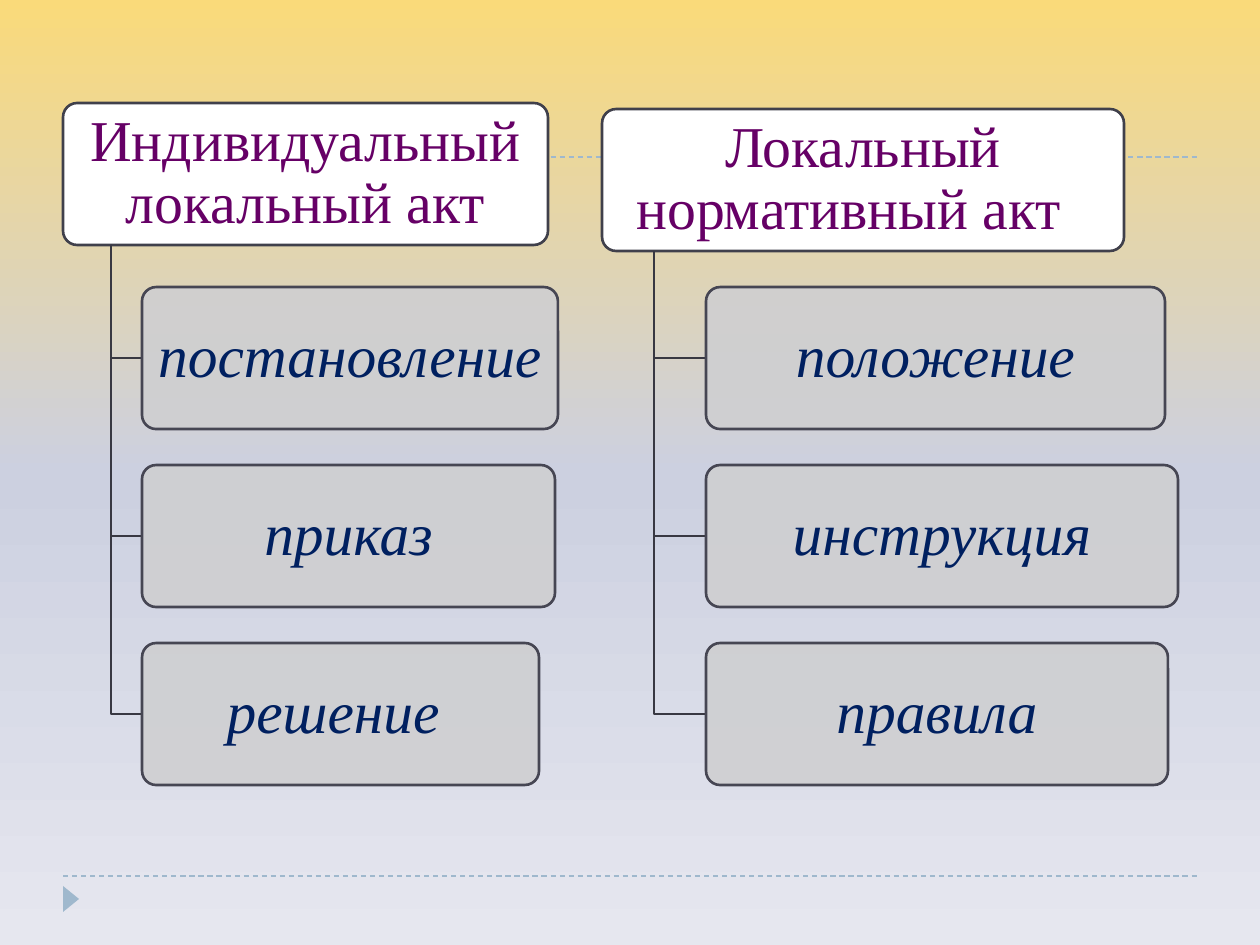
from copy import deepcopy
from dataclasses import dataclass
from pptx import Presentation
from pptx.dml.color import RGBColor as Rgb
from pptx.enum.dml import MSO_LINE as Dash
from pptx.enum.shapes import MSO_CONNECTOR as Conn, MSO_SHAPE as Kind
from pptx.enum.text import MSO_ANCHOR as Anchor, PP_ALIGN as Align
from pptx.oxml.ns import qn
from pptx.oxml.xmlchemy import OxmlElement as Tag
from pptx.util import Pt

PX = 914400 / 126  # EMU in one px


@dataclass(frozen=True)
class Theme:
    sky: tuple = ("FADA7A", "CCD0E0", "E6E7EF")
    rule: str = "9FB8CD"
    limb: str = "383842"
    font: str = "Times New Roman"
    # fill, opacity in %, line, text colour, text size, italic
    head: tuple = ("FFFFFF", 100, "40404B", "660066", 33, False)
    leaf: tuple = ("CFCFD1", 90, "464653", "002060", 34, True)


def emu(*vals):
    return [round(v * PX) for v in vals]


def add_box(text, spot, look):
    """Draw a rounded box at spot (left, top, width, height in px)."""
    fill, alpha, edge, ink, size, slant = look
    box = shapes.add_shape(Kind.ROUNDED_RECTANGLE, *emu(*spot))
    box.shadow.inherit = False
    box.adjustments[0] = 0.1
    box.fill.solid()
    box.fill.fore_color.rgb = Rgb.from_string(fill)
    if alpha < 100:
        tag = Tag("a:alpha")
        tag.set("val", str(alpha * 1000))
        box.fill._xPr.find(qn("a:solidFill"))[0].append(tag)
    box.line.color.rgb = Rgb.from_string(edge)
    box.line.width = Pt(1.5)
    frame = box.text_frame
    frame.word_wrap = True
    frame.vertical_anchor = Anchor.MIDDLE
    frame.margin_left, frame.margin_right = emu(9, 9)
    frame.margin_top, frame.margin_bottom = emu(6, 6)
    para = frame.paragraphs[0]
    para.alignment = Align.CENTER
    para.line_spacing = 0.9
    run = para.add_run()
    run.text = text
    run.font.name = theme.font
    run.font.size = Pt(size)
    run.font.italic = slant
    run.font.color.rgb = Rgb.from_string(ink)


theme = Theme()
deck = Presentation()
deck.slide_width, deck.slide_height = emu(1260, 945)
slide = deck.slides.add_slide(deck.slide_layouts[6])
shapes = slide.shapes

# Background: three colours from top to bottom
back = slide.background.fill
back.gradient()
back.gradient_angle = 270
stops = slide.element.find(".//" + qn("a:gsLst"))
stops.insert(1, deepcopy(stops[0]))
for i, stop in enumerate(back.gradient_stops):
    stop.position = i / 2
    stop.color.rgb = Rgb.from_string(theme.sky[i])

# Dashed rules and corner mark
for y in (876, 157):
    rule = shapes.add_connector(Conn.STRAIGHT, *emu(63, y, 1197, y))
    rule.line.color.rgb = Rgb.from_string(theme.rule)
    rule.line.width = Pt(0.75)
    rule.line.dash_style = Dash.DASH
    rule.element.spPr.append(Tag("a:effectLst"))
mark = shapes.add_shape(Kind.ISOSCELES_TRIANGLE, *emu(58, 891, 26, 16))
mark.shadow.inherit = False
mark.rotation = 90
mark.fill.solid()
mark.fill.fore_color.rgb = Rgb.from_string(theme.rule)
mark.line.fill.background()

# Two trees: head text, left, top, width, leaf left, leaves with widths
TREES = [
    ("Индивидуальный локальный акт", 63, 103, 485, 142,
     [("постановление", 416), ("приказ", 413), ("решение ", 397)]),
    ("Локальный нормативный акт  ", 602, 109, 522, 706,
     [("положение", 459), ("инструкция", 472), ("правила", 462)]),
]
TALL, FIRST, STEP = 142, 287, 178

for title, x, y, wide, left, leaves in TREES:
    add_box(title, (x, y, wide, TALL), theme.head)
    stem = x + round(wide / 10)
    for i, (word, span) in enumerate(leaves):
        top = FIRST + i * STEP
        mid = top + TALL // 2
        pen = shapes.build_freeform(stem, y + TALL, scale=PX)
        pen.add_line_segments([(stem, mid), (left, mid)], close=False)
        limb = pen.convert_to_shape()
        limb.shadow.inherit = False
        limb.fill.background()
        limb.line.color.rgb = Rgb.from_string(theme.limb)
        limb.line.width = Pt(1.5)
        add_box(word, (left, top, span, TALL), theme.leaf)

deck.save("out.pptx")
